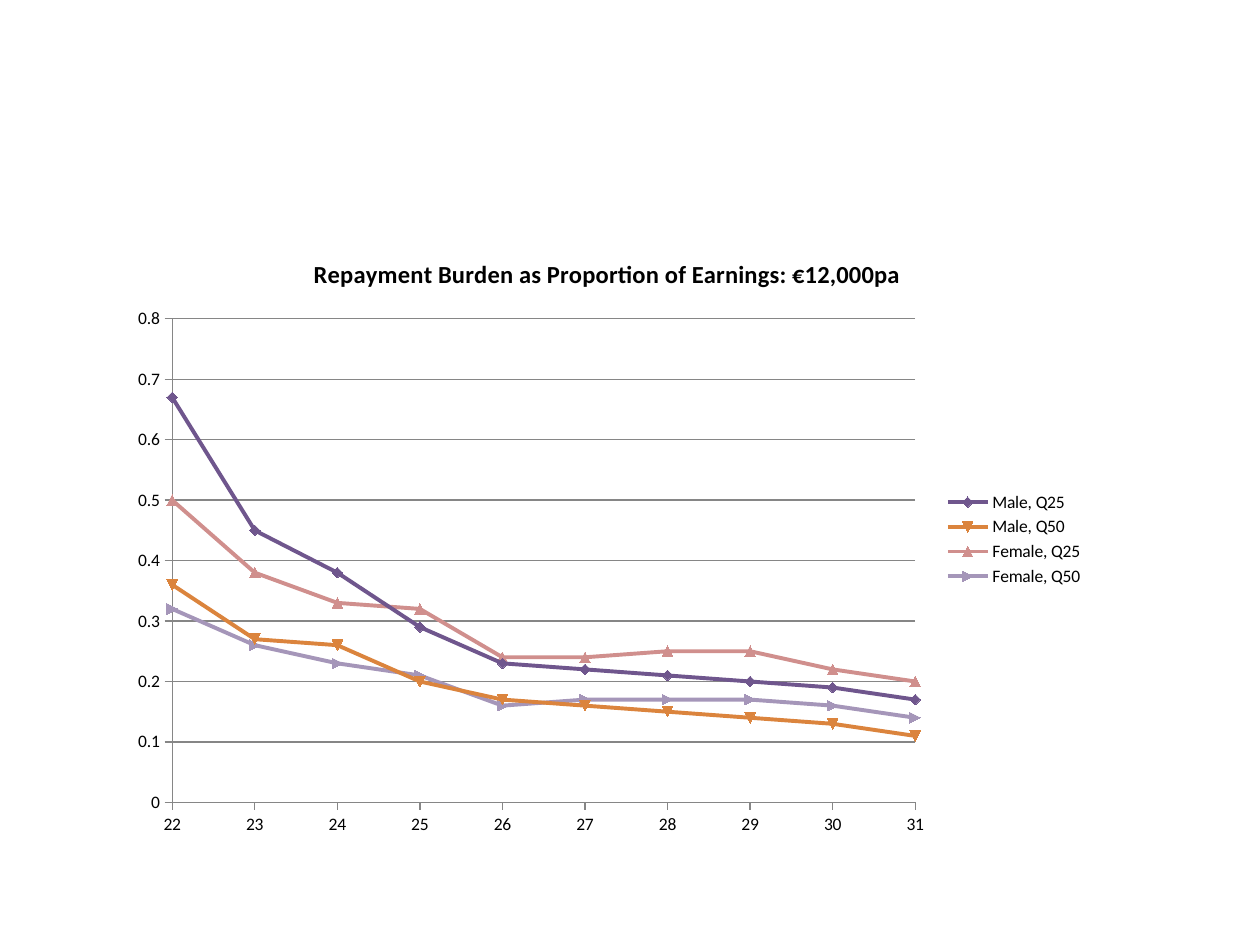
"""Build a slide with a smooth scatter chart of repayment burden by age."""
from pptx import Presentation
from pptx.chart.data import XyChartData
from pptx.dml.color import RGBColor
from pptx.enum.chart import XL_CHART_TYPE as ChartType
from pptx.enum.chart import XL_LEGEND_POSITION as LegendPosition
from pptx.enum.chart import XL_MARKER_STYLE as MarkerStyle
from pptx.enum.chart import XL_TICK_MARK as TickMark
from pptx.oxml import parse_xml
from pptx.oxml.ns import nsdecls
from pptx.util import Inches, Pt

COLORS = {
    "text": "000000",
    "axis": "868686",
    "Male, Q25": "6F568D",
    "Male, Q50": "DB843D",
    "Female, Q25": "D08F8D",
    "Female, Q50": "A596B9",
}
BURDENS = {
    "Male, Q25": [0.67, 0.45, 0.38, 0.29, 0.23, 0.22, 0.21, 0.2, 0.19, 0.17],
    "Male, Q50": [0.36, 0.27, 0.26, 0.2, 0.17, 0.16, 0.15, 0.14, 0.13, 0.11],
    "Female, Q25": [0.5, 0.38, 0.33, 0.32, 0.24, 0.24, 0.25, 0.25, 0.22, 0.2],
    "Female, Q50": [0.32, 0.26, 0.23, 0.21, 0.16, 0.17, 0.17, 0.17, 0.16, 0.14],
}
PLOT_AREA = {"x": 0.055, "y": 0.14, "w": 0.76, "h": 0.79}


def rgb(name):
    return RGBColor.from_string(COLORS[name])


def style_line(line, name, width):
    line.color.rgb = rgb(name)
    line.width = Pt(width)


presentation = Presentation()
presentation.slide_width = Inches(10)
presentation.slide_height = Inches(7.5)
slide = presentation.slides.add_slide(presentation.slide_layouts[6])

chart_data = XyChartData(number_format="General")
for name, burdens in BURDENS.items():
    data_series = chart_data.add_series(name)
    for age, burden in enumerate([0] * 4 + burdens + [0] * 5, start=18):
        data_series.add_data_point(age, burden)

chart = slide.shapes.add_chart(
    ChartType.XY_SCATTER_SMOOTH,
    Inches(0.94), Inches(1.85), Inches(7.76), Inches(4.86), chart_data,
).chart
chart.font.name = "Calibri"
chart.font.size = Pt(10)
chart.font.color.rgb = rgb("text")

chart.has_title = True
run = chart.chart_title.text_frame.paragraphs[0].add_run()
run.text = "Repayment Burden as Proportion of Earnings: €12,000pa"
run.font.name = "Calibri"
run.font.size = Pt(14)
run.font.bold = True
run.font.color.rgb = rgb("text")
chart.chart_title.include_in_layout = False

chart.has_legend = True
chart.legend.position = LegendPosition.RIGHT
chart.legend.include_in_layout = False

age_axis, burden_axis = chart.category_axis, chart.value_axis
for axis, low, high, step in (
    (age_axis, 22, 31, 1),
    (burden_axis, 0, 0.8, 0.1),
):
    axis.minimum_scale = low
    axis.maximum_scale = high
    axis.major_unit = step
    axis.major_tick_mark = TickMark.OUTSIDE
    axis.minor_tick_mark = TickMark.NONE
    axis.tick_labels.number_format = "General"
    axis.tick_labels.number_format_is_linked = False
    style_line(axis.format.line, "axis", 0.75)
age_axis.has_major_gridlines = False
burden_axis.has_major_gridlines = True
style_line(burden_axis.major_gridlines.format.line, "axis", 0.75)

plot = chart.plots[0]
plot.vary_by_categories = False
for index, series in enumerate(plot.series, start=1):
    series._element.idx.val = index
    style_line(series.format.line, series.name, 2.25)
    series.marker.style = MarkerStyle.AUTOMATIC
    series.marker.size = 6
    series.marker.format.fill.solid()
    series.marker.format.fill.fore_color.rgb = rgb(series.name)
    style_line(series.marker.format.line, series.name, 0.75)

plot_area = chart._chartSpace.chart.plotArea
for old_layout in plot_area.findall("{*}layout"):
    plot_area.remove(old_layout)
sizes = "".join(f'<c:{key} val="{value}"/>' for key, value in PLOT_AREA.items())
plot_area.insert(0, parse_xml(
    f'<c:layout {nsdecls("c")}><c:manualLayout><c:layoutTarget val="inner"/>'
    f'<c:xMode val="edge"/><c:yMode val="edge"/>{sizes}'
    "</c:manualLayout></c:layout>"
))

presentation.save("out.pptx")
